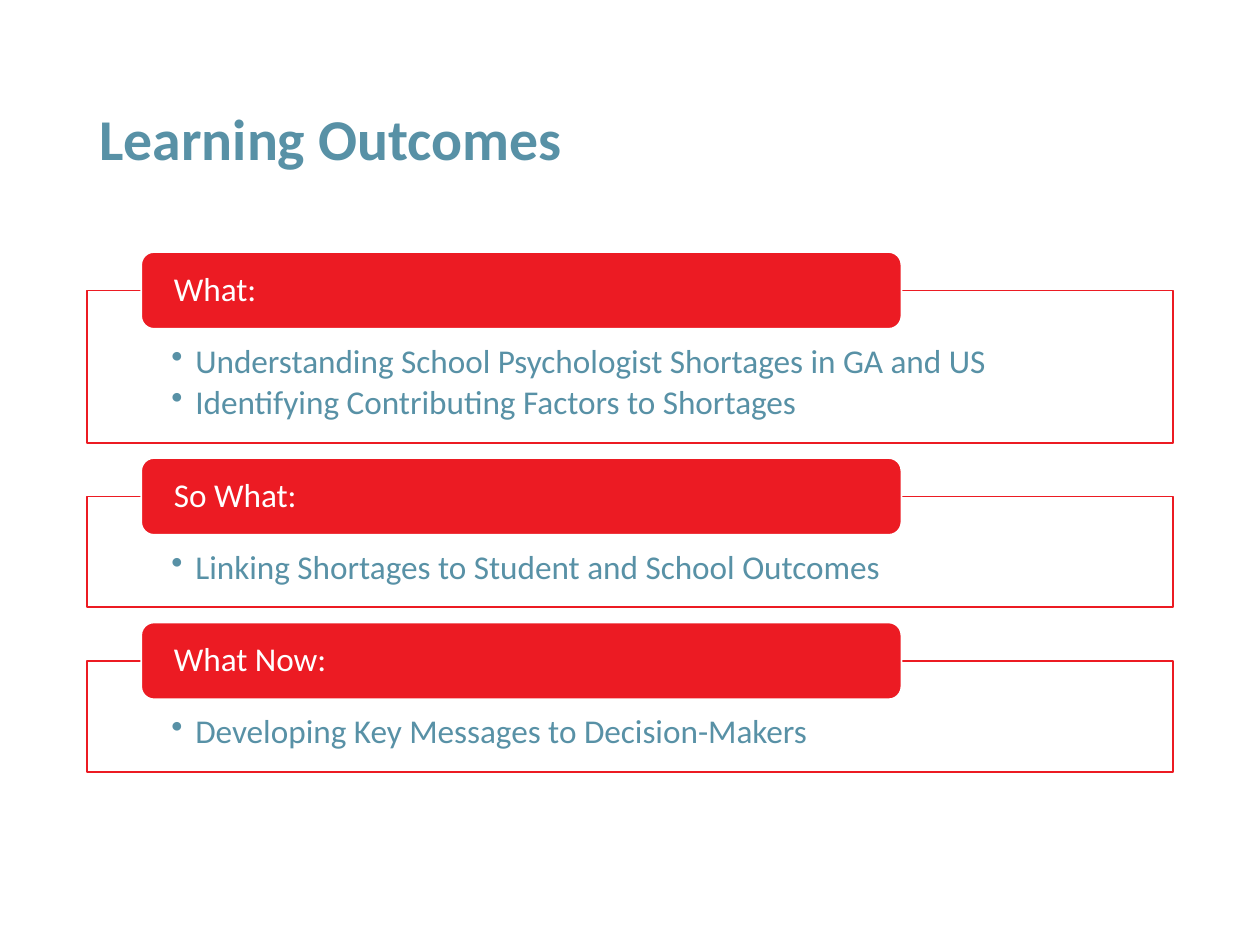
import lxml.etree
import pptx
import pptx.util
import pptx.dml.color
import pptx.enum.shapes
import pptx.enum.text
import pptx.oxml.ns

COLORS = {"teal": "5891A6", "red": "EC1B23", "white": "FFFFFF"}
FONT = "Calibri"
qn = pptx.oxml.ns.qn
Inches = pptx.util.Inches
rgb = pptx.dml.color.RGBColor.from_string
Anchor = pptx.enum.text.MSO_ANCHOR
Preset = pptx.enum.shapes.MSO_SHAPE


def write(shape, lines, size=19, color="teal", bold=False, bullet=False,
          anchor=Anchor.MIDDLE, insets=(0.1, 0.05, 0.1, 0.05), after=0):
    frame = shape.text_frame
    frame.word_wrap = True
    frame.auto_size = pptx.enum.text.MSO_AUTO_SIZE.NONE
    frame.vertical_anchor = anchor
    (frame.margin_left, frame.margin_top,
     frame.margin_right, frame.margin_bottom) = map(Inches, insets)
    frame.text = "\n".join(lines)
    for paragraph in frame.paragraphs:
        paragraph.alignment = pptx.enum.text.PP_ALIGN.LEFT
        paragraph.line_spacing = 0.9
        paragraph.space_after = pptx.util.Pt(after)
        if bullet:
            properties = paragraph._p.get_or_add_pPr()
            properties.set("marL", str(Inches(0.19)))
            properties.set("indent", str(-Inches(0.19)))
            lxml.etree.SubElement(properties, qn("a:buChar")).set("char", "•")
        paragraph.font.name = FONT
        paragraph.font.size = pptx.util.Pt(size)
        paragraph.font.bold = bold
        paragraph.font.color.rgb = rgb(COLORS[color])


def add_box(preset, place, fill, line):
    box = slide.shapes.add_shape(preset, *map(Inches, place))
    box.shadow.inherit = False
    box.fill.solid()
    box.fill.fore_color.rgb = rgb(COLORS[fill])
    box.line.color.rgb = rgb(COLORS[line])
    box.line.width = pptx.util.Pt(1)
    return box


deck = pptx.Presentation()
slide_width, slide_height = 10, 7.5
deck.slide_width, deck.slide_height = Inches(slide_width), Inches(slide_height)
slide = deck.slides.add_slide(deck.slide_layouts[5])

margin = 0.069 * slide_width
content_width = slide_width - 2 * margin
heading_left = margin + 0.05 * content_width
heading_width = 0.7 * content_width
heading_height = 0.61
overlap = heading_height / 2
row_gap = 0.12

title = slide.shapes.title
title.left, title.top = Inches(margin), Inches(0.4)
title.width, title.height = Inches(content_width), Inches(1.45)
write(title, ["Learning Outcomes"], size=33, bold=True)

outcomes = [
    ("What:", ["Understanding School Psychologist Shortages in GA and US",
               "Identifying Contributing Factors to Shortages"]),
    ("So What:", ["Linking Shortages to Student and School Outcomes"]),
    ("What Now:", ["Developing Key Messages to Decision-Makers"]),
]

row_top = 2
for question, goals in outcomes:
    panel_top = row_top + overlap
    panel_height = 0.55 + 0.33 * len(goals)
    panel = add_box(Preset.RECTANGLE,
                    (margin, panel_top, content_width, panel_height), "white", "red")
    panel_color = panel.fill._xPr.find(qn("a:solidFill"))[0]
    lxml.etree.SubElement(panel_color, qn("a:alpha")).set("val", "90000")
    write(panel, goals, bullet=True, anchor=Anchor.TOP,
          insets=(0.67, 0.43, 0.67, 0.15), after=2.85)
    heading = add_box(Preset.ROUNDED_RECTANGLE,
                      (heading_left, row_top, heading_width, heading_height),
                      "red", "white")
    write(heading, [question], color="white", insets=(0.23, 0, 0.23, 0))
    row_top = panel_top + panel_height + row_gap

deck.save("out.pptx")
